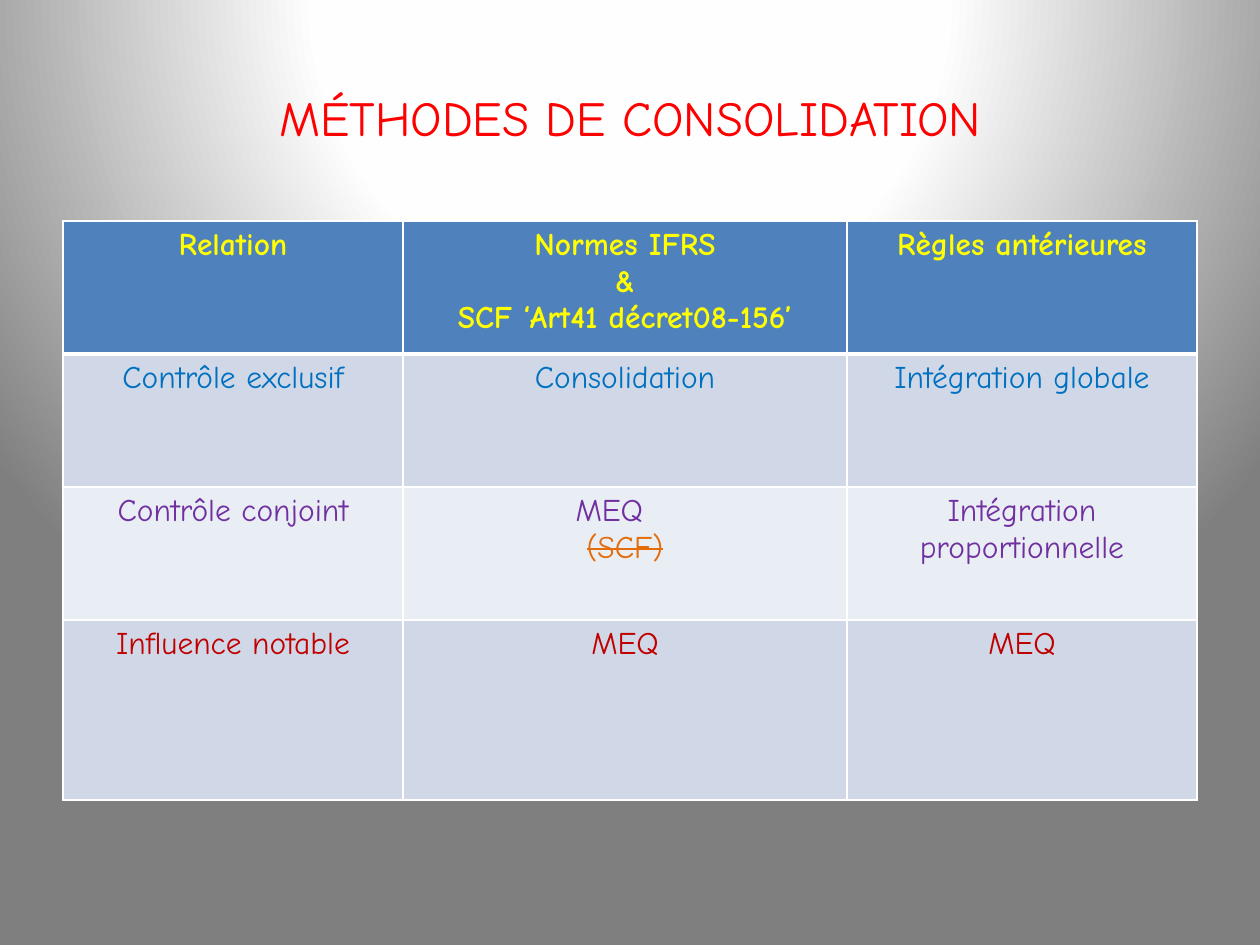
from pptx import Presentation
from pptx.dml.color import RGBColor as RGB
from pptx.enum.text import MSO_ANCHOR as ANCHOR, PP_ALIGN as ALIGN
from pptx.oxml import parse_xml
from pptx.util import Pt

NS = "http://schemas.openxmlformats.org/drawingml/2006/main"
SCALE = 914400 / 126
FONT = "Comic Neue"
HEX = {
    "white": "FFFFFF", "pale": "FEFEFE", "gray": "7F7F7F",
    "red": "FF0000", "yellow": "FFFF00", "blue": "0070C0", "purple": "7030A0",
    "orange": "E46C0A", "dark": "C00000",
    "head": "4F81BD", "band": "D0D8E8", "light": "E9EDF4",
}


def px(num):
    return round(num * SCALE)


def write(par, text, size, color, bold=False):
    """Add one centred run to a paragraph and return the run."""
    par.alignment = ALIGN.CENTER
    run = par.add_run()
    run.text = text
    run.font.size = Pt(size)
    run.font.name = FONT
    run.font.bold = bold
    run.font.color.rgb = RGB.from_string(HEX[color])
    return run


deck = Presentation()
deck.slide_width, deck.slide_height = px(1260), px(945)
slide = deck.slides.add_slide(deck.slide_layouts[6])

# Background: a radial gradient centred above the slide
fill = slide.background.fill
fill.gradient()
stops = "".join(
    f'<a:gs pos="{pos * 1000}"><a:srgbClr val="{HEX[name]}"/></a:gs>'
    for pos, name in [(0, "white"), (40, "pale"), (100, "gray")])
grad = slide.background._cSld.find(f".//{{{NS}}}gradFill")
grad.getparent().replace(grad, parse_xml(
    f'<a:gradFill xmlns:a="{NS}" rotWithShape="1"><a:gsLst>{stops}</a:gsLst>'
    '<a:path path="circle"><a:fillToRect l="50000" t="-80000" r="50000" '
    'b="180000"/></a:path></a:gradFill>'))

# Title
frame = slide.shapes.add_textbox(px(63), px(38), px(1134), px(157)).text_frame
frame.word_wrap = True
frame.vertical_anchor = ANCHOR.MIDDLE
write(frame.paragraphs[0], "MÉTHODES DE CONSOLIDATION", 28, "red")

# Table: each row has a fill, a text colour and the lines of its cells
rows = [
    ("head", "yellow", [["Relation"],
                        ["Normes IFRS", "&", "SCF ‘Art41 décret08-156’"],
                        ["Règles antérieures"]]),
    ("band", "blue", [["Contrôle exclusif"], ["Consolidation"],
                      ["Intégration globale"]]),
    ("light", "purple", [["Contrôle conjoint"], ["MEQ", "(SCF)"],
                         ["Intégration proportionnelle"]]),
    ("band", "dark", [["Influence notable"], ["MEQ"], ["MEQ"]]),
]
widths = [340, 444, 350]
heights = [133, 133, 133, 180]
table = slide.shapes.add_table(
    len(rows), len(widths), px(63), px(221), px(sum(widths)), px(sum(heights))).table
for col, wide in zip(table.columns, widths):
    col.width = px(wide)
for row, high in zip(table.rows, heights):
    row.height = px(high)

for r, (back, color, cells) in enumerate(rows):
    edges = {"L": 1, "R": 1, "T": 3 if r == 1 else 1, "B": 3 if r == 0 else 1}
    for c, lines in enumerate(cells):
        cell = table.cell(r, c)
        cell.fill.solid()
        cell.fill.fore_color.rgb = RGB.from_string(HEX[back])
        props = cell._tc.get_or_add_tcPr()
        for i, (side, wide) in enumerate(edges.items()):
            props.insert(i, parse_xml(
                f'<a:ln{side} xmlns:a="{NS}" w="{Pt(wide)}"><a:solidFill>'
                f'<a:srgbClr val="{HEX["white"]}"/></a:solidFill></a:ln{side}>'))
        frame = cell.text_frame
        for i, line in enumerate(lines):
            par = frame.paragraphs[0] if i == 0 else frame.add_paragraph()
            struck = line == "(SCF)"
            run = write(par, line, 18, "orange" if struck else color, r == 0)
            if struck:
                run.font._element.set("strike", "sngStrike")

# The joint-control method sits a little left of the centre
joint = table.cell(2, 1).text_frame.paragraphs[0]
joint.alignment = ALIGN.LEFT
shift = joint._p.get_or_add_pPr()
shift.set("marL", str(px(160)))
shift.set("indent", "0")

deck.save("out.pptx")
